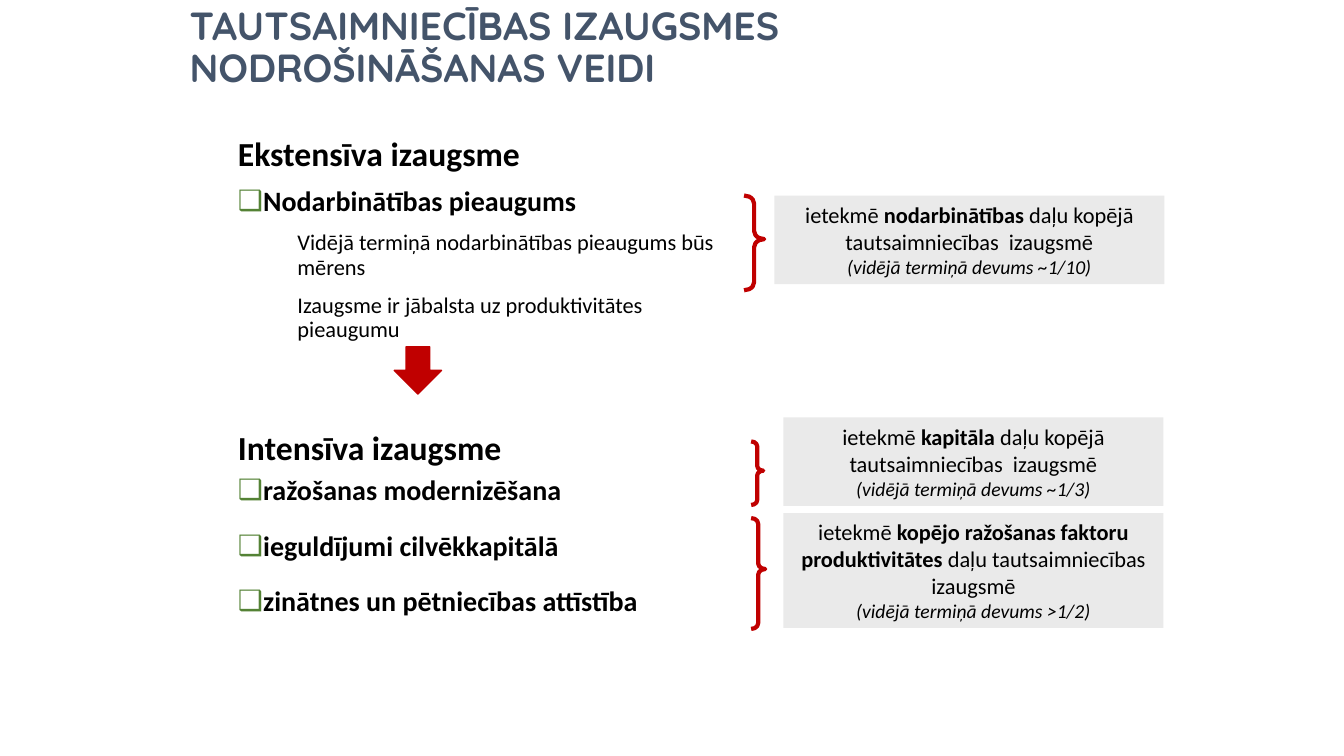
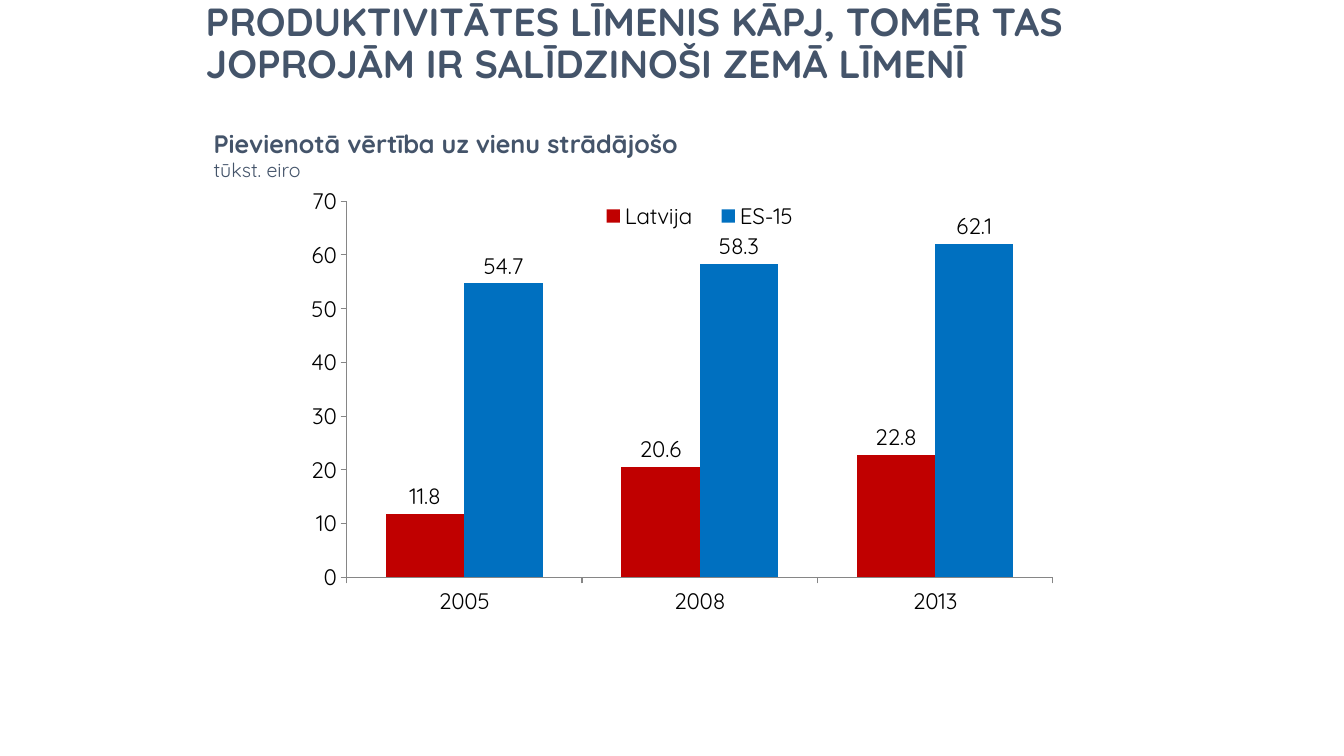
from lxml.etree import SubElement
from pptx import Presentation
from pptx.chart.data import CategoryChartData
from pptx.dml.color import RGBColor
from pptx.enum.chart import (XL_CHART_TYPE, XL_LABEL_POSITION,
                             XL_LEGEND_POSITION, XL_TICK_MARK)
from pptx.enum.shapes import MSO_SHAPE
from pptx.enum.text import MSO_ANCHOR, MSO_AUTO_SIZE, PP_ALIGN
from pptx.oxml.ns import qn
from pptx.util import Inches, Pt

# Shared style
HUES = {"title": "44546A", "text": "000000", "red": "C00000", "blue": "0070C0",
        "grey": "EAEAEA", "green": "548235", "axis": "868686"}
HEAD, BODY = "Quicksand", "Calibri"

# Content: growth types
TITLE1 = "TAUTSAIMNIECĪBAS IZAUGSMES NODROŠINĀŠANAS VEIDI"
KINDS = {  # size, bold, left margin, indent, space before, space after
    "head": (24, True, 0, 0, 10, 0),
    "next": (24, True, 0, 0, 64, 0),
    "main": (20, True, 0.25, -0.32, 10, 0),
    "item": (20, True, 0.25, -0.32, 6, 12),
    "note": (16, False, 0.59, 0, 10, 0),
}
LINES = [
    ("head", "Ekstensīva izaugsme"),
    ("main", "Nodarbinātības pieaugums"),
    ("note", "Vidējā termiņā nodarbinātības pieaugums būs mērens"),
    ("note", "Izaugsme ir jābalsta uz produktivitātes pieaugumu"),
    ("next", "Intensīva izaugsme"),
    ("item", "ražošanas modernizēšana"),
    ("item", "ieguldījumi cilvēkkapitālā"),
    ("item", "zinātnes un pētniecības attīstība"),
]
EFFECTS = [  # brace box, panel box, bold words, rest, share
    ((7.38, 1.94, 0.2, 0.94), (7.68, 1.94, 3.87, 0.88), "nodarbinātības ",
     "daļu kopējā tautsaimniecības  izaugsmē", "~1/10"),
    ((7.45, 4.38, 0.12, 0.63), (7.77, 4.14, 3.77, 0.88), "kapitāla ",
     "daļu kopējā tautsaimniecības  izaugsmē", "~1/3"),
    ((7.45, 5.14, 0.14, 1.1), (7.77, 5.09, 3.77, 1.14),
     "kopējo ražošanas faktoru produktivitātes ",
     "daļu tautsaimniecības izaugsmē", ">1/2"),
]

# Content: productivity
TITLE2 = ("PRODUKTIVITĀTES LĪMENIS KĀPJ, TOMĒR TAS JOPROJĀM IR "
          "SALĪDZINOŠI ZEMĀ LĪMENĪ")
CAPTION = [("Pievienotā vērtība uz vienu strādājošo", 18, True),
           ("tūkst. eiro", 14, False)]
YEARS = ["2005", "2008", "2013"]
SERIES = [("Latvija", "red", (11.8, 20.6, 22.8)),
          ("ES-15", "blue", (54.7, 58.3, 62.1))]


def color(name):
    return RGBColor.from_string(HUES[name])


def inches(box):
    return [Inches(n) for n in box]


def place(shape, box):
    shape.left, shape.top, shape.width, shape.height = inches(box)


def style(font, face, size, hue="text", bold=False, italic=False):
    font.name, font.size = face, Pt(size)
    font.bold, font.italic = bold, italic
    font.color.rgb = color(hue)


def add_run(para, text, *look):
    run = para.add_run()
    run.text = text
    style(run.font, *look)


def get_para(frame, index):
    return frame.add_paragraph() if index else frame.paragraphs[0]


def add_slide(deck, layout, title, box):
    slide = deck.slides.add_slide(deck.slide_layouts[layout])
    place(slide.shapes.title, box)
    frame = slide.shapes.title.text_frame
    frame.auto_size = MSO_AUTO_SIZE.NONE
    frame.vertical_anchor = MSO_ANCHOR.MIDDLE
    para = frame.paragraphs[0]
    para.alignment, para.line_spacing = PP_ALIGN.LEFT, 0.9
    add_run(para, title, HEAD, 28, "title", True)
    return slide


def add_form(slide, kind, box, fill=None, line=None, width=1):
    shape = slide.shapes.add_shape(kind, *inches(box))
    shape.shadow.inherit = False
    if fill:
        shape.fill.solid()
        shape.fill.fore_color.rgb = color(fill)
    else:
        shape.fill.background()
    if line:
        shape.line.color.rgb = color(line)
        shape.line.width = Pt(width)
    else:
        shape.line.fill.background()
    return shape


def set_bullet(para, left, indent):
    props = para._p.get_or_add_pPr()
    props.set("marL", str(Inches(left)))
    props.set("indent", str(Inches(indent)))
    if indent:
        hue = SubElement(props, qn("a:buClr"))
        SubElement(hue, qn("a:srgbClr"), val=HUES["green"])
        SubElement(props, qn("a:buChar"), char="❑")
    else:
        SubElement(props, qn("a:buNone"))


def set_layout(owner, box, inner=False):
    # Fractions of the chart area
    layout = owner.find(qn("c:layout"))
    if layout is None:
        layout = owner.makeelement(qn("c:layout"), {})
        after = owner.find(qn("c:legendPos"))
        owner.insert(0 if after is None else owner.index(after) + 1, layout)
    for child in list(layout):
        layout.remove(child)
    manual = SubElement(layout, qn("c:manualLayout"))
    if inner:
        SubElement(manual, qn("c:layoutTarget"), val="inner")
    for tag in ("xMode", "yMode"):
        SubElement(manual, qn("c:" + tag), val="edge")
    for tag, part in zip("xywh", box):
        SubElement(manual, qn("c:" + tag), val=str(part))


def build_growth(deck):
    slide = add_slide(deck, 1, TITLE1, (1.78, 0.13, 9.61, 0.71))
    # List
    body = slide.placeholders[1]
    place(body, (2.26, 1.31, 5.28, 5.04))
    frame = body.text_frame
    frame.auto_size = MSO_AUTO_SIZE.NONE
    for index, (kind, text) in enumerate(LINES):
        size, bold, left, indent, before, after = KINDS[kind]
        para = get_para(frame, index)
        para.line_spacing = 0.9
        para.space_before, para.space_after = Pt(before), Pt(after)
        set_bullet(para, left, indent)
        add_run(para, text, BODY, size, "text", bold)
    # Braces and panels
    for brace, panel, strong, rest, share in EFFECTS:
        mark = add_form(slide, MSO_SHAPE.RIGHT_BRACE, brace, None, "red", 3)
        mark.adjustments[0], mark.adjustments[1] = 0.4, 0.46
        frame = add_form(slide, MSO_SHAPE.RECTANGLE, panel, "grey").text_frame
        rows = [[("ietekmē ", 16, False, False), (strong, 16, True, False),
                 (rest, 16, False, False)],
                [(f"(vidējā termiņā devums {share})", 14, False, True)]]
        for index, row in enumerate(rows):
            para = get_para(frame, index)
            para.alignment = PP_ALIGN.CENTER
            for text, size, bold, italic in row:
                add_run(para, text, BODY, size, "text", bold, italic)
    add_form(slide, MSO_SHAPE.DOWN_ARROW, (3.91, 3.44, 0.47, 0.47), "red", "red")


def build_output(deck):
    slide = add_slide(deck, 5, TITLE2, (1.94, 0.13, 9.06, 0.63))
    # Caption
    frame = slide.shapes.add_textbox(*inches((2.02, 1.22, 6.3, 0.64))).text_frame
    frame.word_wrap = True
    for index, (text, size, bold) in enumerate(CAPTION):
        add_run(get_para(frame, index), text, HEAD, size, "title", bold)
    # Chart
    data = CategoryChartData()
    data.categories = YEARS
    for name, _, values in SERIES:
        data.add_series(name, values)
    chart = slide.shapes.add_chart(XL_CHART_TYPE.COLUMN_CLUSTERED,
                                   *inches((2.73, 1.86, 7.87, 4.25)), data).chart
    style(chart.font, HEAD, 16)
    chart.has_title = False
    plot = chart.plots[0]
    plot.gap_width, plot.overlap, plot.vary_by_categories = 100, 0, False
    for series, (_, hue, _) in zip(plot.series, SERIES):
        series.format.fill.solid()
        series.format.fill.fore_color.rgb = color(hue)
        labels = series.data_labels
        labels.show_value = True
        labels.position = XL_LABEL_POSITION.OUTSIDE_END
    # Axes
    for axis in (chart.category_axis, chart.value_axis):
        axis.has_major_gridlines = False
        axis.major_tick_mark = XL_TICK_MARK.OUTSIDE
        axis.format.line.color.rgb = color("axis")
    scale = chart.value_axis
    scale.minimum_scale, scale.maximum_scale, scale.major_unit = 0, 70, 10
    scale.tick_labels.number_format = "#,##0"
    scale.tick_labels.number_format_is_linked = False
    # Legend and plot area
    chart.has_legend = True
    chart.legend.position = XL_LEGEND_POSITION.LEFT
    chart.legend.include_in_layout = True
    set_layout(chart.legend._element, (0.39, 0.03, 0.29, 0.07))
    area = chart._chartSpace.find(".//" + qn("c:plotArea"))
    set_layout(area, (0.09, 0.03, 0.89, 0.88), True)


def main():
    deck = Presentation()
    deck.slide_width, deck.slide_height = Inches(13.33), Inches(7.5)
    build_growth(deck)
    build_output(deck)
    deck.save("out.pptx")


if __name__ == "__main__":
    main()
